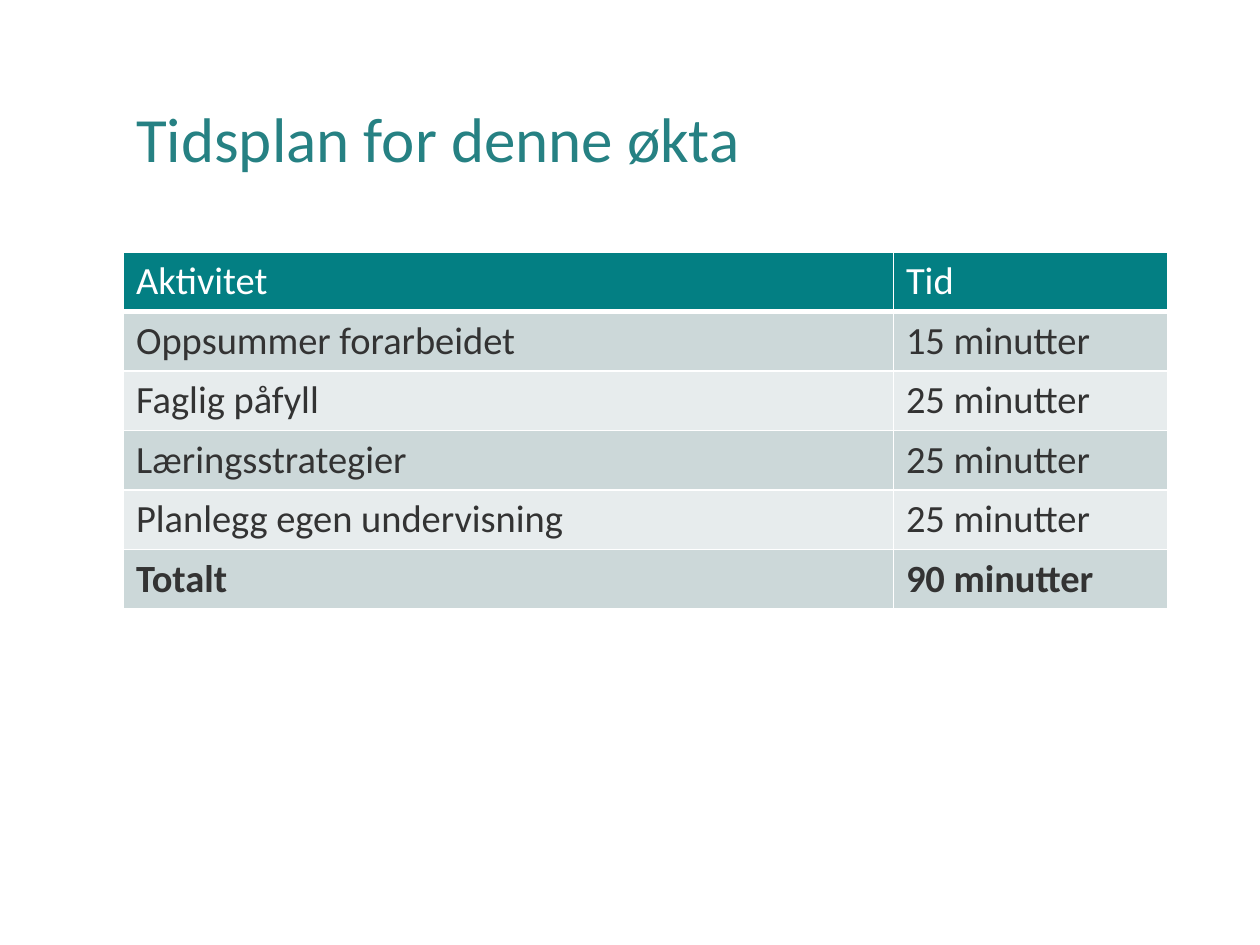
"""Build the session timetable slide."""
from dataclasses import dataclass

from lxml.etree import SubElement
from pptx import Presentation
from pptx.dml.color import RGBColor
from pptx.enum.text import MSO_ANCHOR, PP_ALIGN
from pptx.oxml.ns import qn
from pptx.util import Cm, Pt

LEFT, WIDTH = Cm(2.49), Cm(21.06)
COL_WIDTHS = (Cm(15.52), Cm(5.54))
ROW_HEIGHT = Cm(1.2)
WHITE, TEAL, DARK = "FFFFFF", "037F83", "333333"
BANDS = ("E7ECED", "CCD8D9")


@dataclass
class Activity:
    name: str
    time: str
    bold: bool = False


ACTIVITIES = [
    Activity("Aktivitet", "Tid"),
    Activity("Oppsummer forarbeidet", "15 minutter"),
    Activity("Faglig påfyll", "25 minutter"),
    Activity("Læringsstrategier", "25 minutter"),
    Activity("Planlegg egen undervisning", "25 minutter"),
    Activity("Totalt", "90 minutter", bold=True),
]


def rgb(value: str) -> RGBColor:
    return RGBColor.from_string(value)


def write(tf, text: str, color: str, **font) -> None:
    p = tf.paragraphs[0]
    p.alignment = PP_ALIGN.LEFT
    r = p.add_run()
    r.text = text
    r.font.color.rgb = rgb(color)
    for name, value in {"name": "Calibri", **font}.items():
        setattr(r.font, name, value)


def add_borders(cell, widths: dict[str, int]) -> None:
    tc_pr = cell._tc.get_or_add_tcPr()
    for side, width in widths.items():
        ln = SubElement(tc_pr, qn(f"a:ln{side}"), w=str(Pt(width)))
        fill = SubElement(ln, qn("a:solidFill"))
        SubElement(fill, qn("a:srgbClr"), val=WHITE)


def add_title(s, text: str) -> None:
    sp = s.shapes.title
    box = {"left": LEFT, "top": Cm(1.02), "width": WIDTH, "height": Cm(3.68)}
    for name, value in box.items():
        setattr(sp, name, value)
    tf = sp.text_frame
    tf.vertical_anchor = MSO_ANCHOR.MIDDLE
    tf.paragraphs[0].line_spacing = 0.9
    write(tf, text, "268183", size=Pt(36))


def add_timetable(s, activities: list[Activity]) -> None:
    height = ROW_HEIGHT * len(activities)
    table = s.shapes.add_table(len(activities), len(COL_WIDTHS),
                               LEFT, Cm(5.08), WIDTH, height).table
    for column, width in zip(table.columns, COL_WIDTHS):
        column.width = width
    for i, activity in enumerate(activities):
        table.rows[i].height = ROW_HEIGHT
        header = i == 0
        borders = {"L": 1, "R": 1, "T": 3 if i == 1 else 1, "B": 3 if header else 1}
        for j, text in enumerate((activity.name, activity.time)):
            cell = table.cell(i, j)
            add_borders(cell, borders)
            cell.fill.solid()
            cell.fill.fore_color.rgb = rgb(TEAL if header else BANDS[i % 2])
            write(cell.text_frame, text, WHITE if header else DARK,
                  size=Pt(22), bold=activity.bold)


def main() -> None:
    prs = Presentation()
    prs.slide_width, prs.slide_height = Cm(25.4), Cm(19.05)
    s = prs.slides.add_slide(prs.slide_layouts[5])
    add_title(s, "Tidsplan for denne økta")
    add_timetable(s, ACTIVITIES)
    prs.save("out.pptx")


if __name__ == "__main__":
    main()
